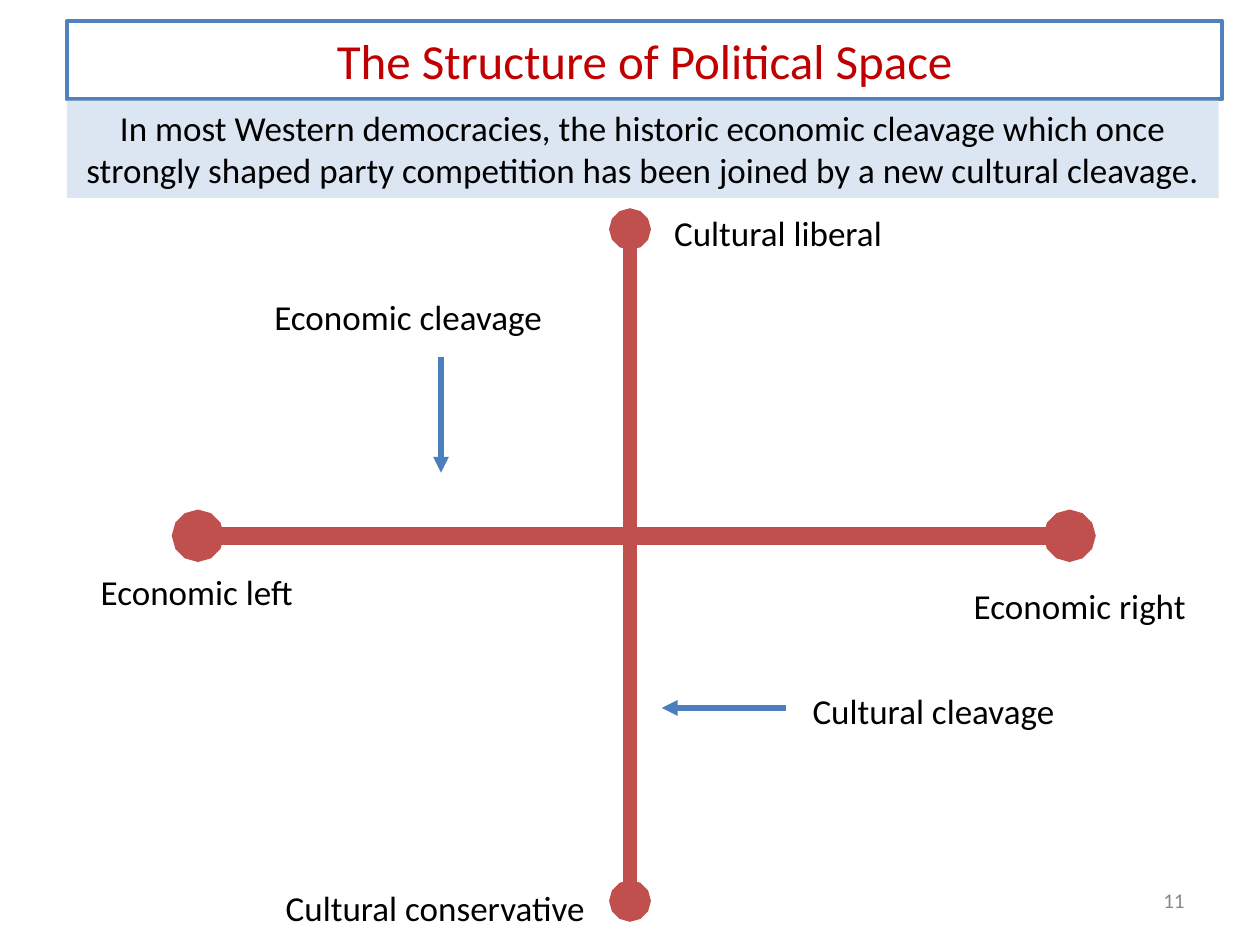
from pptx import Presentation
from pptx.dml.color import RGBColor
from pptx.enum import shapes, text
from pptx.oxml.ns import qn
from pptx.util import Cm, Pt
from lxml import etree

# Content: lengths in cm
TITLE = "The Structure of Political Space"
BANNER = ("In most Western democracies, the historic economic cleavage which once "
          "strongly shaped party competition has been joined by a new cultural cleavage.")
PAGE = "11"
LABELS = [  # wording, left, top, width
    ("Economic cleavage", 5.28, 5.84, 5.97),
    ("Cultural cleavage", 16.13, 13.77, 5.44),
    ("Economic left", 1.78, 11.38, 4.45),
    ("Economic right", 19.38, 11.66, 4.83),
    ("Cultural conservative", 5.51, 17.75, 6.6),
    ("Cultural liberal", 13.34, 4.14, 4.75),
]
AXES = [  # start, end, line width
    ((12.7, 4.62), (12.7, 18.16), 8),
    ((3.99, 10.8), (21.56, 10.8), 10),
]
ARROWS = [((8.89, 7.19), (8.89, 9.53)), ((15.85, 14.27), (13.34, 14.27))]

THEME = {
    "font": "Calibri", "title": "C00000", "body": "000000", "page": "898989",
    "frame": "4F81BD", "axis": "C0504D", "arrow": "4B7EBC", "band": "DCE6F2",
    "title_size": 28, "body_size": 20, "page_size": 12,
}
ALIGN = text.PP_ALIGN


def color(name):
    return RGBColor.from_string(THEME[name])


def write(shape, words, role, align, anchor=text.MSO_ANCHOR.TOP, wrap=True):
    frame = shape.text_frame
    frame.text = words
    frame.word_wrap = wrap
    frame.vertical_anchor = anchor
    para = frame.paragraphs[0]
    para.alignment = align
    font = para.runs[0].font
    font.name = THEME["font"]
    font.size = Pt(THEME[role + "_size"])
    font.color.rgb = color(role)


def draw(slide, start, end, role, width, **ends):
    line = slide.shapes.add_connector(
        shapes.MSO_CONNECTOR.STRAIGHT, *map(Cm, start + end))
    line.line.color.rgb = color(role)
    line.line.width = Pt(width)
    props = line.line._get_or_add_ln()
    for end_name, kind in ends.items():
        etree.SubElement(props, qn(f"a:{end_name}End"), type=kind)
    etree.SubElement(line._element.spPr, qn("a:effectLst"))


def main():
    deck = Presentation()
    deck.slide_width, deck.slide_height = Cm(25.4), Cm(19.05)
    slide = deck.slides.add_slide(deck.slide_layouts[5])

    # Framed title
    title = slide.shapes.title
    title.left, title.top, title.width, title.height = map(
        Cm, (1.35, 0.43, 23.29, 1.57))
    title.line.color.rgb = color("frame")
    title.line.width = Pt(2.25)
    write(title, TITLE, "title", ALIGN.CENTER, text.MSO_ANCHOR.MIDDLE)

    # Axes and pointers
    for start, end, width in AXES:
        draw(slide, start, end, "axis", width, head="oval", tail="oval")
    for start, end in ARROWS:
        draw(slide, start, end, "arrow", 3, tail="triangle")

    # Labels
    for words, left, top, width in LABELS:
        box = slide.shapes.add_textbox(*map(Cm, (left, top, width, 1.11)))
        write(box, words, "body", ALIGN.LEFT, wrap=False)

    # Page number
    page = slide.shapes.add_textbox(*map(Cm, (18.21, 17.65, 5.92, 1.01)))
    write(page, PAGE, "page", ALIGN.RIGHT, text.MSO_ANCHOR.MIDDLE)

    # Banner under the title
    band = slide.shapes.add_shape(
        shapes.MSO_SHAPE.RECTANGLE, *map(Cm, (1.35, 2.03, 23.22, 1.96)))
    band.shadow.inherit = False
    band.fill.solid()
    band.fill.fore_color.rgb = color("band")
    band.line.fill.background()
    write(band, BANNER, "body", ALIGN.CENTER)

    deck.save("out.pptx")


if __name__ == "__main__":
    main()
